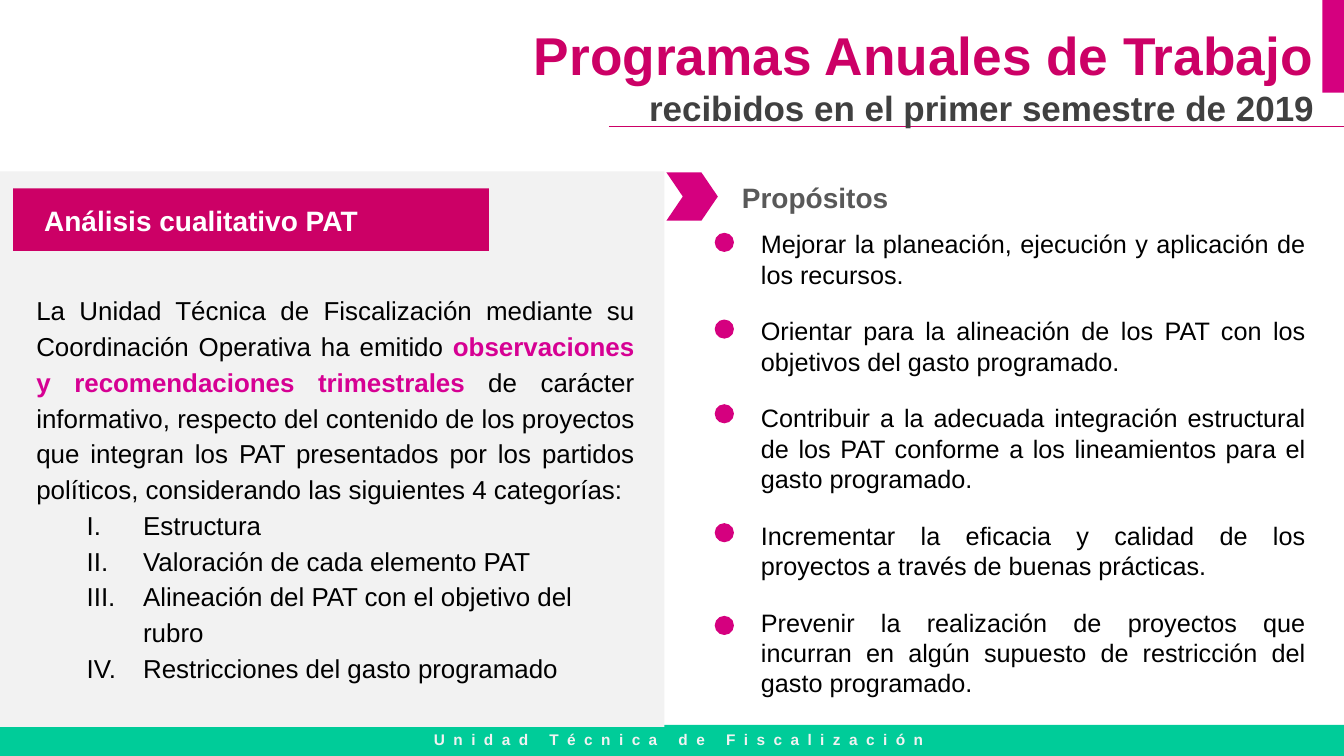
from pptx import Presentation
from pptx.dml.color import RGBColor
from pptx.enum.shapes import MSO_CONNECTOR, MSO_SHAPE
from pptx.enum.text import MSO_ANCHOR, MSO_AUTO_SIZE, PP_ALIGN
from pptx.oxml.ns import qn
from pptx.util import Inches, Pt
from lxml.etree import SubElement

HUES = {
    "pink": "D5007F", "rose": "CC0066", "magenta": "D60093",
    "green": "00CC99", "pale": "F2F2F2", "white": "FFFFFF",
    "black": "000000", "dark": "404040", "gray": "595959",
}
FONT = "Arial"
WIDE, HIGH = Inches(13.33), Inches(7.5)

TITLE = [
    ("Programas Anuales de Trabajo", 38, "rose"),
    ("recibidos en el primer semestre de 2019", 25, "dark"),
]
BAND = "Análisis cualitativo PAT"
HEAD = "Propósitos "
FOOT = "Unidad Técnica de Fiscalización"
INTRO = [
    ("La Unidad Técnica de Fiscalización mediante su Coordinación Operativa ha emitido ", "black", False),
    ("observaciones y recomendaciones trimestrales", "magenta", True),
    (" de carácter informativo, respecto del contenido de los proyectos que integran los PAT "
     "presentados por los partidos políticos, considerando las siguientes 4 categorías:", "black", False),
]
KINDS = [
    "Estructura",
    "Valoración de cada elemento PAT",
    "Alineación del PAT con el objetivo del rubro",
    "Restricciones del gasto programado",
]
# 
GOALS = [
    ("Mejorar la planeación, ejecución y aplicación de los recursos.", 2, 30.8),
    ("Orientar para la alineación de los PAT con los objetivos del gasto programado.", 2, 42.27),
    ("Contribuir a la adecuada integración estructural de los PAT conforme a los lineamientos "
     "para el gasto programado.", 3, 53.47),
    ("Incrementar la eficacia y calidad de los proyectos a través de buenas prácticas.", 2, 69.2),
    ("Prevenir la realización de proyectos que incurran en algún supuesto de restricción "
     "del gasto programado.", 3, 81.47),
]
GOAL_TOP, ROW, PAD, GAP = 29.6, 4, 1.47, 2.04


def area(left, top, wide, high):
    return (int(WIDE * left / 100), int(HIGH * top / 100),
            int(WIDE * wide / 100), int(HIGH * high / 100))


def block(kind, hue, *spot):
    shape = slide.shapes.add_shape(kind, *area(*spot))
    shape.shadow.inherit = False
    shape.fill.solid()
    shape.fill.fore_color.rgb = RGBColor.from_string(HUES[hue])
    shape.line.fill.background()
    return shape


def frame(shape, anchor=MSO_ANCHOR.TOP):
    text = shape.text_frame
    text.word_wrap = True
    text.auto_size = MSO_AUTO_SIZE.NONE
    text.vertical_anchor = anchor
    return text


def box(*spot, anchor=MSO_ANCHOR.TOP):
    return frame(slide.shapes.add_textbox(*area(*spot)), anchor).paragraphs[0]


def seat(shape, *spot, anchor=MSO_ANCHOR.TOP):
    shape.left, shape.top, shape.width, shape.height = area(*spot)
    tree = slide.shapes._spTree
    tree.append(shape._element)
    return frame(shape, anchor)


def line(text, index):
    return text.add_paragraph() if index else text.paragraphs[0]


def write(para, text, size=18, hue="black", bold=False, align=PP_ALIGN.JUSTIFY, space=1, track=0):
    para.alignment = align
    para.line_spacing = space
    para.space_before = para.space_after = Pt(0)
    run = para.add_run()
    run.text = text
    run.font.name, run.font.size, run.font.bold = FONT, Pt(size), bold
    run.font.color.rgb = RGBColor.from_string(HUES[hue])
    if track:
        run._r.get_or_add_rPr().set("spc", str(track * 100))


def mark(para, indent=0, hang=0, roman=False):
    props = para._p.get_or_add_pPr()
    props.set("marL", str(Inches(indent)))
    props.set("indent", str(-Inches(hang)))
    if roman:
        SubElement(props, qn("a:buFont"), typeface="+mj-lt")
        SubElement(props, qn("a:buAutoNum"), type="romanUcPeriod")
    else:
        SubElement(props, qn("a:buNone"))


deck = Presentation()
deck.slide_width, deck.slide_height = WIDE, HIGH
slide = deck.slides.add_slide(deck.slide_layouts[1])
title, body = slide.placeholders

block(MSO_SHAPE.RECTANGLE, "green", 0, 95.87, 100, 4.13)
write(box(1, 95.87, 99, 3.87, anchor=MSO_ANCHOR.MIDDLE), FOOT,
      size=11, hue="pale", bold=True, align=PP_ALIGN.CENTER, track=6)
block(MSO_SHAPE.RECTANGLE, "pink", 98.4, 0, 1.6, 12.27)

left, top, wide, _ = area(45.3, 16.67, 54.7, 0)
rule = slide.shapes.add_connector(MSO_CONNECTOR.STRAIGHT, left, top, left + wide, top)
rule.line.color.rgb = RGBColor.from_string(HUES["rose"])
rule.line.width = Pt(0.5)
SubElement(rule._element.spPr, qn("a:effectLst"))

text = seat(title, 27.53, 2.27, 70.95, 15.47)
for index, (words, size, hue) in enumerate(TITLE):
    write(line(text, index), words, size=size, hue=hue, bold=True, align=PP_ALIGN.RIGHT)

block(MSO_SHAPE.RECTANGLE, "pale", 0, 22.67, 49.43, 73.47)
block(MSO_SHAPE.RECTANGLE, "rose", 0.98, 24.93, 35.4, 8.27)
write(box(2.55, 26.27, 33.08, 5.87, anchor=MSO_ANCHOR.MIDDLE), BAND,
      size=20, hue="white", bold=True)

text = seat(body, 1.95, 37.47, 45.98, 53.87, anchor=MSO_ANCHOR.MIDDLE)
intro = text.paragraphs[0]
mark(intro)
for words, hue, bold in INTRO:
    write(intro, words, size=18.5, hue=hue, bold=bold, space=1.15)
for words in KINDS:
    para = text.add_paragraph()
    para.level = 1
    mark(para, indent=1.06, hang=0.56, roman=True)
    write(para, words, size=18.5, align=PP_ALIGN.LEFT, space=1.15)

top = GOAL_TOP
for words, rows, dot in GOALS:
    high = rows * ROW + PAD
    write(box(55.88, top, 42, high), words)
    block(MSO_SHAPE.OVAL, "pink", 53.18, dot, 1.43, 2.53)
    top += high + GAP

arrow = block(MSO_SHAPE.CHEVRON, "pink", 49.58, 22.8, 3.83, 6.4)
arrow.adjustments[0] = 0.34
write(box(53.48, 23.2, 14.93, 5.87), HEAD,
      size=20, hue="gray", bold=True, align=PP_ALIGN.CENTER)

deck.save("out.pptx")
